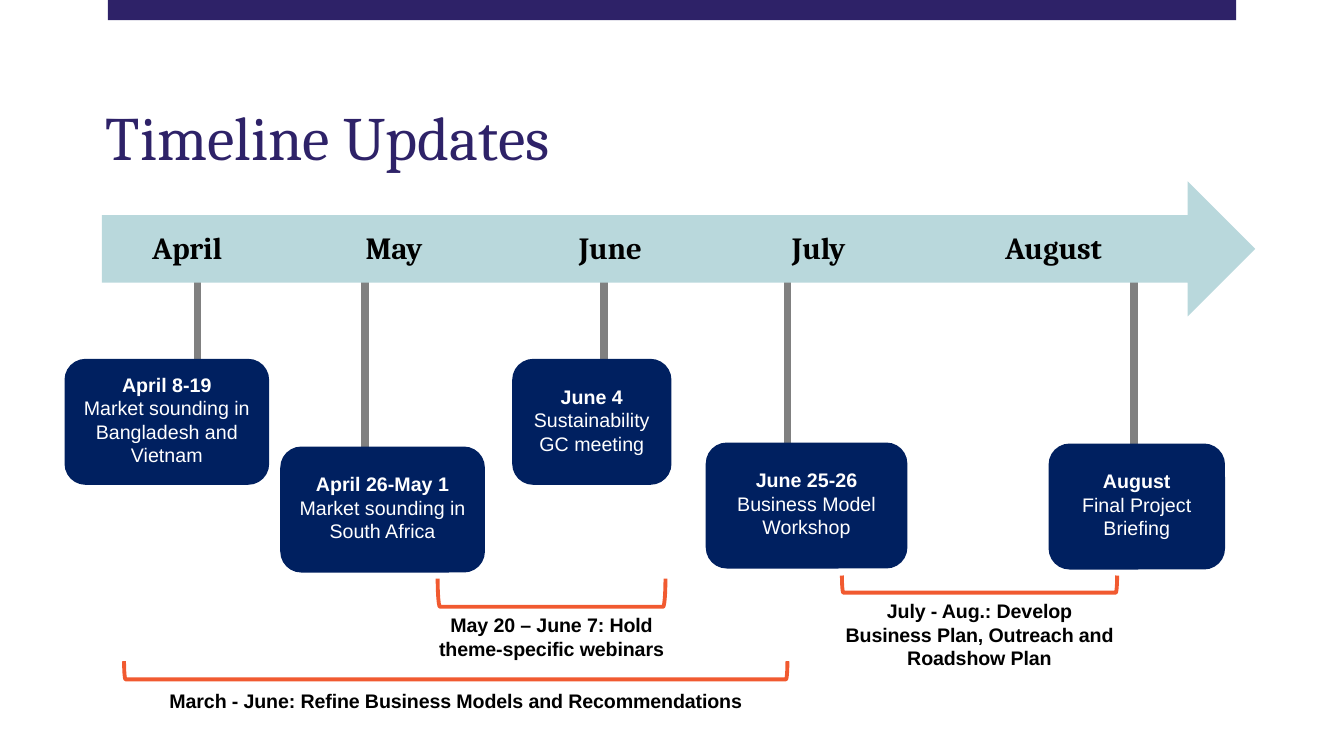
from pptx import Presentation
from pptx import util as u
from pptx.dml.color import RGBColor
from pptx.enum import shapes, text
from pptx.oxml.ns import qn
from lxml import etree

INDIGO = RGBColor(0x2E, 0x22, 0x68)
NAVY = RGBColor(0x00, 0x20, 0x60)
ICE = RGBColor(0xB9, 0xD8, 0xDC)
ORANGE = RGBColor(0xF1, 0x5A, 0x30)
GRAY = RGBColor(0x80, 0x80, 0x80)
BLACK = RGBColor(0x00, 0x00, 0x00)
WHITE = RGBColor(0xFF, 0xFF, 0xFF)

CELL = u.Inches(0.1)
HEADING, BODY = "Cambria", "Arial"


class Timeline:
    """Draws timeline parts on one slide, measured in columns and rows of a square grid."""

    def __init__(self, slide):
        self.slide = slide
        self.shapes = slide.shapes

    def grid(self, *cells):
        return [round(cell * CELL) for cell in cells]

    def add_words(self, paragraph, words, size, font, color, bold=False, spacing=None):
        run = paragraph.add_run()
        run.text = words
        run.font.size = u.Pt(size)
        run.font.name = font
        run.font.bold = bold
        run.font.color.rgb = color
        if spacing is not None:
            run._r.get_or_add_rPr().set("spc", str(spacing))

    def title(self, words, *box):
        heading = self.shapes.title
        heading.left, heading.top, heading.width, heading.height = self.grid(*box)
        frame = heading.text_frame
        frame.auto_size = text.MSO_AUTO_SIZE.NONE
        frame.vertical_anchor = text.MSO_ANCHOR.BOTTOM
        line = frame.paragraphs[0]
        line.alignment = text.PP_ALIGN.LEFT
        line.line_spacing = 0.9
        self.add_words(line, words, 44, HEADING, INDIGO)

    def block(self, kind, fill, *box):
        block = self.shapes.add_shape(kind, *self.grid(*box))
        block.shadow.inherit = False
        block.fill.solid()
        block.fill.fore_color.rgb = fill
        block.line.fill.background()
        return block

    def stem(self, column, top, bottom):
        stem = self.shapes.add_connector(
            shapes.MSO_CONNECTOR.STRAIGHT, *self.grid(column, top, column, bottom))
        stem.line.color.rgb = GRAY
        stem.line.width = u.Pt(5.5)
        etree.SubElement(stem._element.spPr, qn("a:effectLst"))

    def card(self, date, event, left, top, width):
        card = self.block(shapes.MSO_SHAPE.ROUNDED_RECTANGLE, NAVY, left, top, width, 12.5)
        frame = card.text_frame
        frame.word_wrap = True
        frame.vertical_anchor = text.MSO_ANCHOR.MIDDLE
        frame.margin_top, frame.margin_bottom = self.grid(2, 2.4)
        for line, words, bold in ((frame.paragraphs[0], date, True),
                                  (frame.add_paragraph(), event, False)):
            line.alignment = text.PP_ALIGN.CENTER
            self.add_words(line, words, 14, BODY, WHITE, bold)

    def label(self, words, size, font, align, *box):
        frame = self.shapes.add_textbox(*self.grid(*box)).text_frame
        frame.word_wrap = True
        frame.vertical_anchor = text.MSO_ANCHOR.MIDDLE
        frame.margin_left = frame.margin_right = frame.margin_top = frame.margin_bottom = 0
        line = frame.paragraphs[0]
        line.alignment = align
        self.add_words(line, words, size, font, BLACK, True, -10)

    def span(self, words, left, top, width, depth, label_top, label_height):
        middle, center = left + width / 2, top + depth / 2
        bracket = self.shapes.add_shape(
            shapes.MSO_SHAPE.RIGHT_BRACKET,
            *self.grid(middle - depth / 2, center - width / 2, depth, width))
        bracket.rotation = 90
        bracket.shadow.inherit = False
        bracket.fill.background()
        bracket.line.color.rgb = ORANGE
        bracket.line.width = u.Pt(2.75)
        self.label(words, 14, BODY, text.PP_ALIGN.CENTER, left, label_top, width, label_height)


STEMS = [(19.6, 27, 37.2), (36.2, 27, 45), (59.9, 25.4, 41.6),
         (78.1, 26.4, 45.8), (112.5, 27.3, 45.1)]
MONTHS = ["April", "May", "June", "July", "August"]
EVENTS = [
    ("April 8-19", "Market sounding in Bangladesh and Vietnam", 6.4, 35.6, 20.3),
    ("April 26-May 1", "Market sounding in South Africa", 27.8, 44.3, 20.3),
    ("June 4", "Sustainability GC meeting", 50.8, 35.6, 15.8),
    ("June 25-26", "Business Model Workshop", 70, 43.9, 20),
    ("August", "Final Project Briefing", 104, 44, 17.5),
]
SPANS = [
    ("March - June: Refine Business Models and Recommendations",
     12.3, 65.6, 65.8, 1.8, 68.3, 2.4),
    ("May 20 – June 7: Hold theme-specific webinars",
     43.4, 57.4, 22.6, 2.8, 60.8, 4.7),
    ("July - Aug.: Develop Business Plan, Outreach and Roadshow Plan",
     83.5, 57.1, 27.3, 1.7, 59.4, 7.1),
]


def main():
    deck = Presentation()
    deck.slide_width, deck.slide_height = u.Inches(13.33), u.Inches(7.5)
    timeline = Timeline(deck.slides.add_slide(deck.slide_layouts[5]))

    timeline.block(shapes.MSO_SHAPE.RECTANGLE, INDIGO, 10.7, -0.2, 111.9, 2.2)
    timeline.title("Timeline Updates", 9.5, 4, 115, 13.7)
    for stem in STEMS:
        timeline.stem(*stem)
    timeline.block(shapes.MSO_SHAPE.RIGHT_ARROW, ICE, 10.1, 18, 114.4, 13.4)
    for index, month in enumerate(MONTHS):
        timeline.label(month, 22, HEADING, text.PP_ALIGN.LEFT,
                       15.1 + 21.15 * index, 22.7, 18.5, 3.7)
    for event in EVENTS:
        timeline.card(*event)
    for span in SPANS:
        timeline.span(*span)

    deck.save("out.pptx")


if __name__ == "__main__":
    main()
